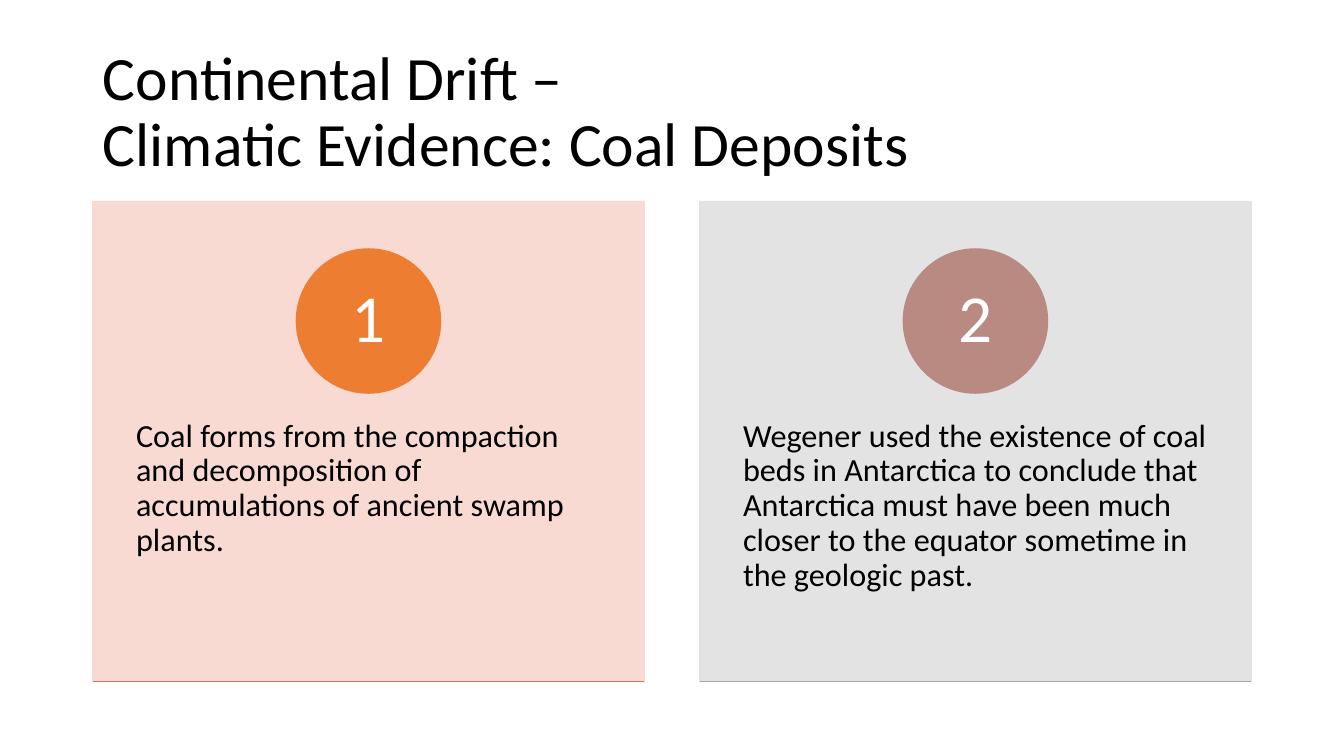
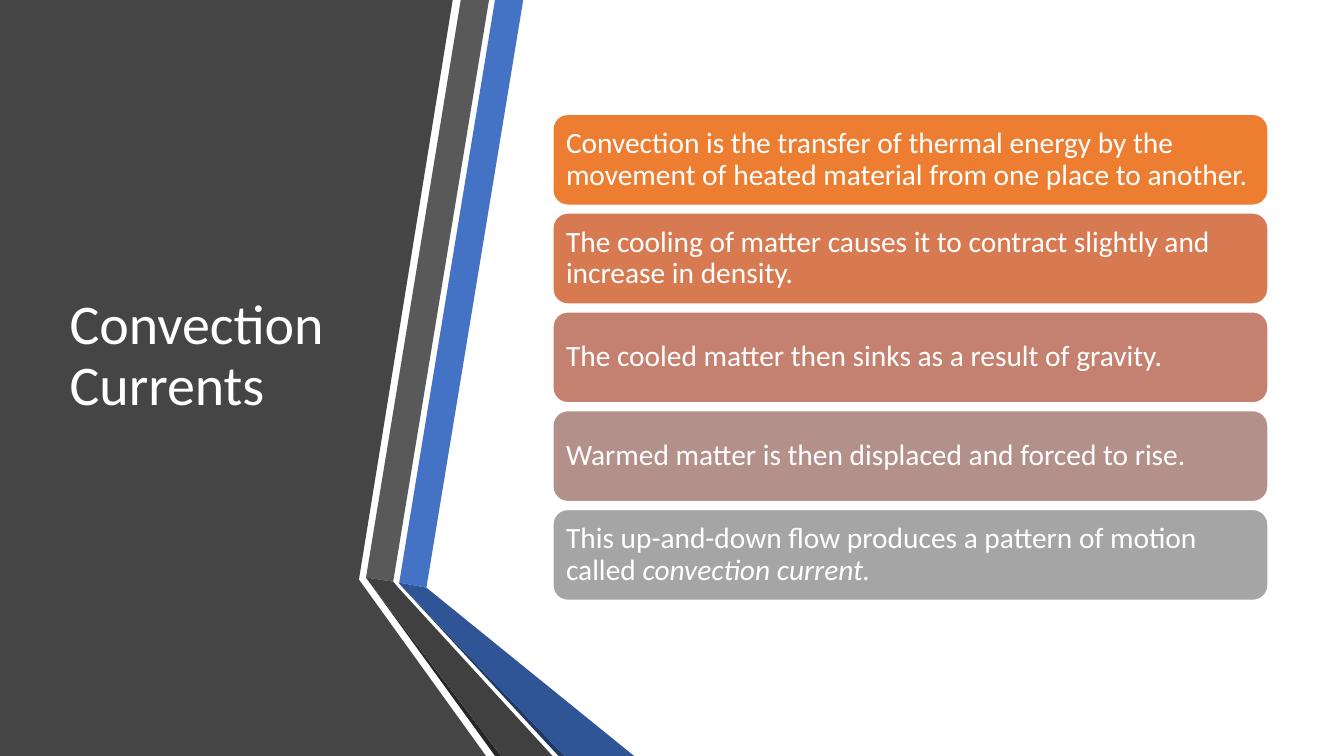
from lxml.etree import SubElement
from pptx import Presentation
from pptx.dml.color import RGBColor
from pptx.enum.shapes import MSO_CONNECTOR, MSO_SHAPE as SHAPE
from pptx.enum.text import MSO_ANCHOR as ANCHOR, MSO_AUTO_SIZE, PP_ALIGN as ALIGN
from pptx.oxml.ns import qn
from pptx.util import Inches, Pt

# Shared colours and font
FONT = "Calibri"
BLACK = RGBColor(0x00, 0x00, 0x00)
WHITE = RGBColor(0xFF, 0xFF, 0xFF)
ORANGE = RGBColor(0xED, 0x7D, 0x31)
RUST = RGBColor(0xD1, 0x7B, 0x5C)
PEACH = RGBColor(0xF8, 0xD7, 0xCE)
CORAL = RGBColor(0xD8, 0x7A, 0x51)
ROSE = RGBColor(0xC4, 0x81, 0x70)
MAUVE = RGBColor(0xB9, 0x8A, 0x82)
TAUPE = RGBColor(0xB4, 0x90, 0x8B)
SILVER = RGBColor(0xA5, 0xA5, 0xA5)
PALE = RGBColor(0xE1, 0xE1, 0xE1)
PANEL = RGBColor(0x45, 0x45, 0x45)
GREY = RGBColor(0x59, 0x59, 0x59)
DARK = RGBColor(0x40, 0x40, 0x40)
SHADE = RGBColor(0x26, 0x26, 0x26)
BLUE = RGBColor(0x44, 0x72, 0xC4)
DEEP = RGBColor(0x2F, 0x55, 0x97)
NAVY = RGBColor(0x20, 0x38, 0x64)


def write(shape, text, size, color=WHITE, align=ALIGN.LEFT,
          anchor=ANCHOR.MIDDLE, pad=(0.1, 0.05), tail=""):
    """Fill a shape with one paragraph; tail is added in italics."""
    frame = shape.text_frame
    frame.word_wrap = True
    frame.auto_size = MSO_AUTO_SIZE.NONE
    frame.vertical_anchor = anchor
    frame.margin_left = frame.margin_right = Inches(pad[0])
    frame.margin_top = frame.margin_bottom = Inches(pad[1])
    para = frame.paragraphs[0]
    para.text = text
    para.alignment = align
    para.line_spacing = 0.9
    if tail:
        run = para.add_run()
        run.text = tail
        run.font.italic = True
    for run in para.runs:
        run.font.name = FONT
        run.font.size = Pt(size)
        run.font.color.rgb = color


def paint(shape, fill, line=None, width=1):
    """Give a shape a flat fill and, if asked, an outline."""
    shape.shadow.inherit = False
    shape.fill.solid()
    shape.fill.fore_color.rgb = fill
    if line is None:
        shape.line.fill.background()
    else:
        shape.line.color.rgb = line
        shape.line.width = Pt(width)


deck = Presentation()
deck.slide_width, deck.slide_height = Inches(13.33), Inches(7.5)
layout = deck.slide_layouts[5]

# Both slides with their titles
heads = [
    ("Continental Drift –\vClimatic Evidence: Coal Deposits", 44, BLACK,
     (0.92, 0.4, 11.5, 1.45)),
    ("Convection Currents", 40, WHITE, (0.59, 0.75, 3.04, 5.58)),
]
slides = []
for text, size, color, box in heads:
    slide = deck.slides.add_slide(layout)
    title = slide.shapes.title
    title.left, title.top, title.width, title.height = map(Inches, box)
    write(title, text, size, color)
    slides.append(slide)
coal, flow = slides

# Slide 1: numbered cards
TOP, WIDE, HIGH, DISC = 2, 5.47, 4.76, 1.43
cards = [
    (PEACH, ORANGE, RUST,
     "Coal forms from the compaction and decomposition of accumulations "
     "of ancient swamp plants."),
    (PALE, MAUVE, SILVER,
     "Wegener used the existence of coal beds in Antarctica to conclude that "
     "Antarctica must have been much closer to the equator sometime in the "
     "geologic past."),
]
for i, (back, spot, rule, text) in enumerate(cards):
    left = 0.92 + i * 6.02
    card = coal.shapes.add_shape(SHAPE.RECTANGLE, Inches(left), Inches(TOP),
                                 Inches(WIDE), Inches(HIGH))
    paint(card, back, back)
    for clr in card._element.spPr.iter(qn("a:srgbClr")):
        SubElement(clr, qn("a:alpha")).set("val", "90000")
    write(card, text, 23, BLACK, anchor=ANCHOR.TOP, pad=(0.43, 0.36))
    card.text_frame.margin_top = Inches(2.16)

    disc = coal.shapes.add_shape(SHAPE.OVAL, Inches(left + (WIDE - DISC) / 2),
                                 Inches(2.47), Inches(DISC), Inches(DISC))
    paint(disc, spot, spot)
    write(disc, str(i + 1), 48, align=ALIGN.CENTER, pad=(0.11, 0.01))

    base = coal.shapes.add_connector(
        MSO_CONNECTOR.STRAIGHT, Inches(left), Inches(TOP + HIGH),
        Inches(left + WIDE), Inches(TOP + HIGH))
    base.line.color.rgb = rule
    base.line.width = Pt(1)
    SubElement(base._element.spPr, qn("a:effectLst"))

# Slide 2: dark panel and folded ribbons
folds = [
    (PANEL, [(0, 0), (4.49, 0), (3.56, 5.75), (4.82, 7.5), (0, 7.5)]),
    (BLUE, [(3.96, 5.78), (4.23, 5.83), (5.19, 0), (4.91, 0)]),
    (GREY, [(4.85, 0), (4.57, 0), (3.63, 5.73), (3.9, 5.77)]),
    (SHADE, [(3.63, 5.73), (4.91, 7.5), (4.97, 7.5)]),
    (NAVY, [(3.96, 5.79), (5.54, 7.5), (5.6, 7.5)]),
    (DEEP, [(3.96, 5.79), (5.6, 7.5), (6.29, 7.5), (4.23, 5.83),
            (3.96, 5.78)]),
    (DARK, [(5.48, 7.5), (3.95, 5.83), (3.9, 5.77), (3.63, 5.73),
            (4.97, 7.5)]),
]
for color, spots in folds:
    first, *rest = [(Inches(x), Inches(y)) for x, y in spots]
    pen = flow.shapes.build_freeform(*first)
    pen.add_line_segments(rest, close=True)
    paint(pen.convert_to_shape(), color)

# The title goes in front of the panel
head = flow.shapes.title._element
head.getparent().append(head)

# Slide 2: stacked bars
bars = [
    (ORANGE, "Convection is the transfer of thermal energy by the movement of "
             "heated material from one place to another.", ""),
    (CORAL, "The cooling of matter causes it to contract slightly and "
            "increase in density.", ""),
    (ROSE, "The cooled matter then sinks as a result of gravity.", ""),
    (TAUPE, "Warmed matter is then displaced and forced to rise.", ""),
    (SILVER, "This up-and-down flow produces a pattern of motion called ",
     "convection current."),
]
for i, (color, text, tail) in enumerate(bars):
    bar = flow.shapes.add_shape(SHAPE.ROUNDED_RECTANGLE, Inches(5.48),
                                Inches(1.13 + i * 0.98), Inches(7.1),
                                Inches(0.91))
    paint(bar, color, WHITE, 1.5)
    write(bar, text, 21, pad=(0.09, 0.09), tail=tail)

deck.save("out.pptx")
